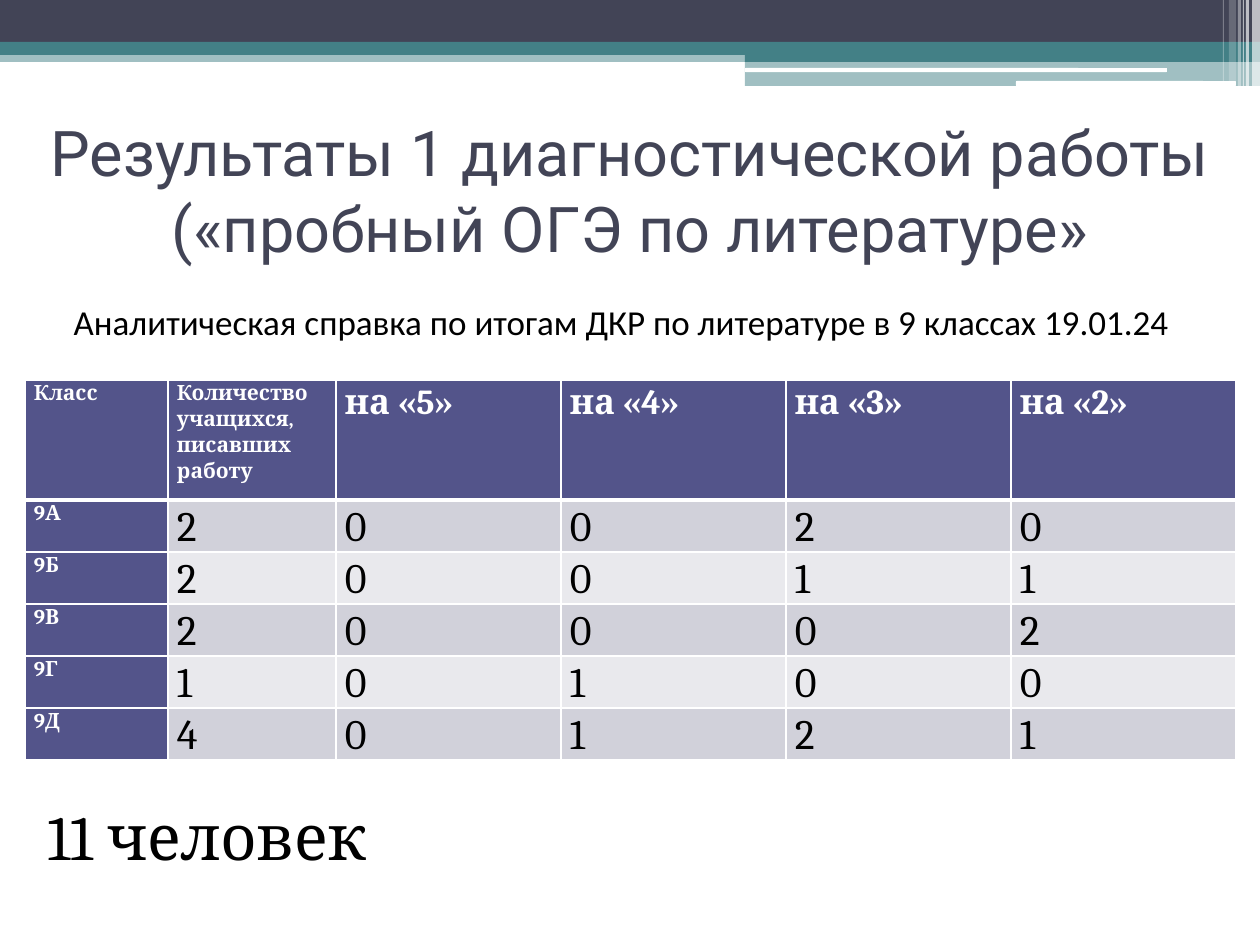
from lxml import etree
from pptx import Presentation
from pptx.dml.color import RGBColor
from pptx.enum.shapes import MSO_SHAPE
from pptx.enum.text import MSO_ANCHOR, MSO_AUTO_SIZE, PP_ALIGN
from pptx.oxml.ns import qn
from pptx.util import Pt

RECT, ROUNDED = MSO_SHAPE.RECTANGLE, MSO_SHAPE.ROUNDED_RECTANGLE
CENTER, JUSTIFY, LEFT = PP_ALIGN.CENTER, PP_ALIGN.JUSTIFY, PP_ALIGN.LEFT
MIDDLE, TOP = MSO_ANCHOR.MIDDLE, MSO_ANCHOR.TOP
NO_AUTOFIT = MSO_AUTO_SIZE.NONE
TITLE_ONLY = 5

EMU_PER_PX = 914400 / 126
SLIDE_W, SLIDE_H = 1260, 945
NAVY, TEAL, WHITE, BLACK = "424456", "438086", "FFFFFF", "000000"
HEAD_FILL, BANDS = "53548A", ("D1D1DA", "E9E9ED")

COLUMN_WIDTHS = (143, 168, 225, 225, 225, 225)
HEAD_HEIGHT, ROW_HEIGHT = 120, 52
RESULTS = (
    ("Класс", "Количество учащихся, писавших работу",
     "на «5»", "на «4»", "на «3»", "на «2»"),
    ("9А", "2", "0", "0", "2", "0"),
    ("9Б", "2", "0", "0", "1", "1"),
    ("9В", "2", "0", "0", "0", "2"),
    ("9Г", "1", "0", "1", "0", "0"),
    ("9Д", "4", "0", "1", "2", "1"),
)


def px(length):
    return round(length * EMU_PER_PX)


def color(hex_code):
    return RGBColor.from_string(hex_code)


def format_text(frame, size, font, hex_code, align, bold=False):
    for paragraph in frame.paragraphs:
        paragraph.alignment = align
        for run in paragraph.runs:
            run.font.size = Pt(size)
            run.font.name = font
            run.font.bold = bold
            run.font.color.rgb = color(hex_code)


def add_bar(slide, box, hex_code, opacity=100, preset=RECT):
    bar = slide.shapes.add_shape(preset, *map(px, box))
    bar.shadow.inherit = False
    bar.line.fill.background()
    bar.fill.solid()
    bar.fill.fore_color.rgb = color(hex_code)
    if opacity < 100:
        fill_color = bar._element.spPr.find(qn("a:solidFill"))[0]
        etree.SubElement(fill_color, qn("a:alpha"), val=str(opacity * 1000))


def add_header_bands(slide, left, top, width):
    # Full-width bands, then the deeper step on the right
    step = 745
    add_bar(slide, (left, top + 50, width, 12), TEAL, 50)
    add_bar(slide, (left, top, width, 42), NAVY)
    add_bar(slide, (left, top + 42, width, 13), TEAL)
    add_bar(slide, (left + step, top + 49, width - step, 13), TEAL)
    add_bar(slide, (left + step, top + 61, width - step, 25), TEAL, 50)
    # White rules
    add_bar(slide, (left + step, top + 68, 422, 4), WHITE, preset=ROUNDED)
    add_bar(slide, (left + 1016, top + 81, 220, 5), WHITE, preset=ROUNDED)
    # Translucent stripes: distance from right edge, width, height, opacity
    for offset, stripe_width, height, opacity in (
            (8, 8, 86, 65), (14, 3, 86, 65), (17, 1, 86, 60),
            (22, 3, 86, 40), (31, 7, 81, 20), (37, 1, 81, 30)):
        add_bar(slide, (left + width - offset, top, stripe_width, height),
                WHITE, opacity)


def add_title(slide, left, top, width, height):
    title = slide.shapes.title
    title.left, title.top, title.width, title.height = map(
        px, (left, top, width, height))
    frame = title.text_frame
    frame.text = "Результаты 1 диагностической работы («пробный ОГЭ по литературе»"
    frame.word_wrap = True
    frame.auto_size = NO_AUTOFIT
    frame.vertical_anchor = MIDDLE
    format_text(frame, 36, "Roboto", NAVY, CENTER)


def add_note(slide, box, text, size, font, align, anchor, wrap):
    frame = slide.shapes.add_textbox(*map(px, box)).text_frame
    frame.text = text
    frame.word_wrap = wrap
    frame.vertical_anchor = anchor
    format_text(frame, size, font, BLACK, align)


def set_borders(cell, widths):
    properties = cell._tc.get_or_add_tcPr()
    for index, (side, points) in enumerate(zip("LRTB", widths)):
        border = etree.Element(qn(f"a:ln{side}"), w=str(Pt(points)))
        fill = etree.SubElement(border, qn("a:solidFill"))
        etree.SubElement(fill, qn("a:srgbClr"), val=WHITE)
        properties.insert(index, border)


def add_results_table(slide, left, top):
    width = sum(COLUMN_WIDTHS)
    height = HEAD_HEIGHT + ROW_HEIGHT * (len(RESULTS) - 1)
    table = slide.shapes.add_table(
        len(RESULTS), len(COLUMN_WIDTHS),
        *map(px, (left, top, width, height))).table
    table.first_row = table.horz_banding = False
    for column, column_width in zip(table.columns, COLUMN_WIDTHS):
        column.width = px(column_width)

    for r, values in enumerate(RESULTS):
        table.rows[r].height = px(ROW_HEIGHT if r else HEAD_HEIGHT)
        for c, value in enumerate(values):
            cell = table.cell(r, c)
            heading = r == 0 or c == 0
            cell.margin_left = cell.margin_right = px(9)
            cell.margin_top = cell.margin_bottom = 0
            cell.fill.solid()
            cell.fill.fore_color.rgb = color(
                HEAD_FILL if heading else BANDS[(r - 1) % 2])
            # A thick rule parts the heading row from the results
            set_borders(cell, (1, 1, 3 if r == 1 else 1, 3 if r == 0 else 1))
            cell.text_frame.text = value
            cell.text_frame.paragraphs[0].line_spacing = 1.07
            if c == 0 or (r == 0 and c == 1):
                size = 12
            else:
                size = 24 if r else 20
            format_text(cell.text_frame, size, "Cambria",
                        WHITE if heading else BLACK, JUSTIFY, heading)


def main():
    presentation = Presentation()
    presentation.slide_width, presentation.slide_height = px(SLIDE_W), px(SLIDE_H)
    slide = presentation.slides.add_slide(presentation.slide_layouts[TITLE_ONLY])
    add_header_bands(slide, 0, 0, SLIDE_W)
    add_title(slide, 15, 116, 1230, 147)
    add_results_table(slide, 25, 380)
    add_note(slide, (57, 294, 1129, 55),
             "Аналитическая справка по итогам ДКР по литературе в 9 классах 19.01.24",
             20, "Calibri", CENTER, MIDDLE, False)
    add_note(slide, (35, 791, 476, 89), "11 человек",
             36, "Cambria", LEFT, TOP, True)
    presentation.save("out.pptx")


if __name__ == "__main__":
    main()
